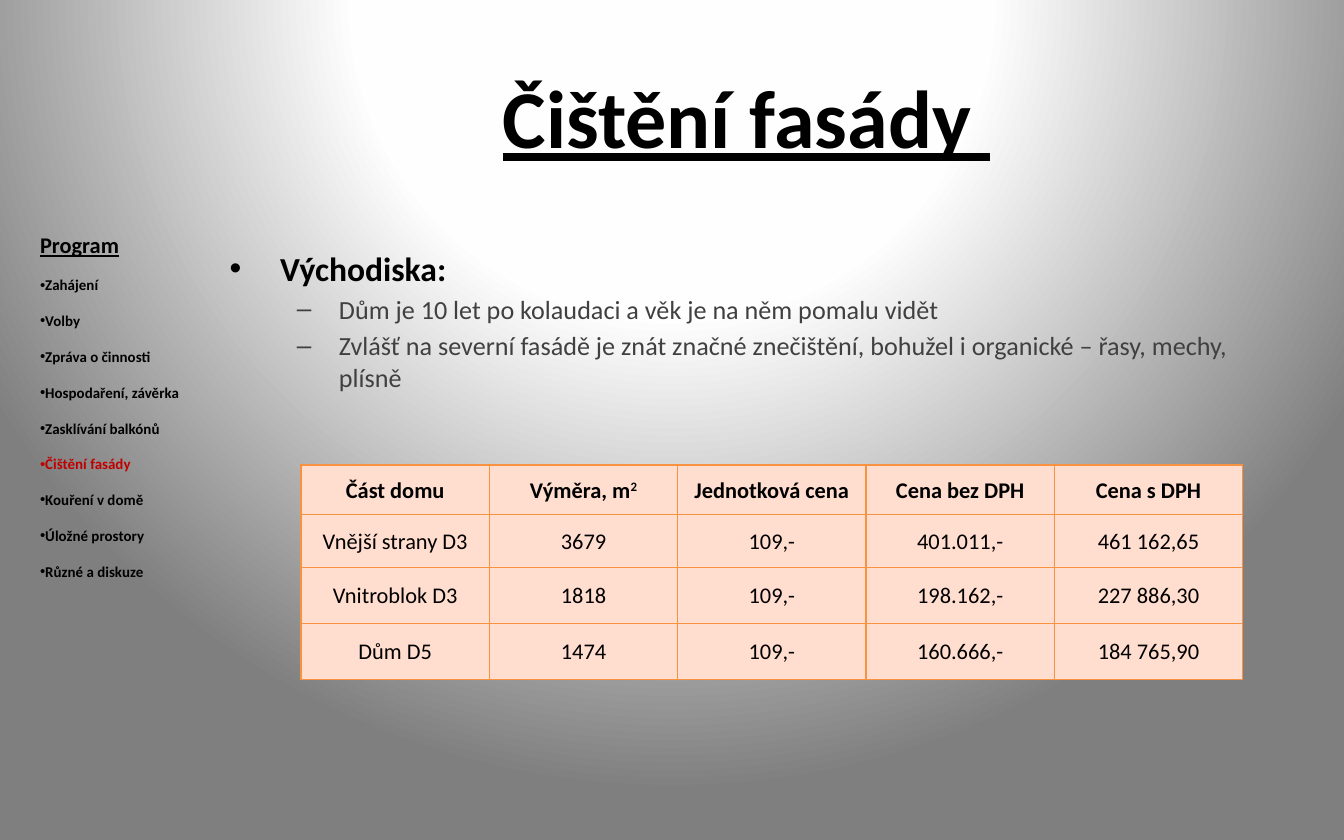
from lxml import etree
from pptx import Presentation
from pptx.dml.color import RGBColor
from pptx.enum.text import MSO_ANCHOR, PP_ALIGN
from pptx.oxml import parse_xml
from pptx.oxml.ns import nsdecls, qn
from pptx.util import Pt

CENTER = PP_ALIGN.CENTER
MIDDLE = MSO_ANCHOR.MIDDLE
FONT = "Calibri"
COLORS = {"text": "000000", "muted": "404040", "active": "C00000",
          "cell": "FFDDCF", "border": "F69240"}
GRADIENT = [(0, "FFFFFF"), (40, "FEFEFE"), (100, "7F7F7F")]

# Content
TITLE = "Čištění fasády "
HEADING = "Východiska:"
POINTS = [
    "Dům je 10 let po kolaudaci a věk je na něm pomalu vidět",
    "Zvlášť na severní fasádě je znát značné znečištění, bohužel i organické – řasy, mechy, plísně",
]
AGENDA_TITLE = "Program"
AGENDA = ["Zahájení", "Volby", "Zpráva o činnosti", "Hospodaření, závěrka",
          "Zasklívání balkónů", "Čištění fasády", "Kouření v domě",
          "Úložné prostory", "Různé a diskuze"]
ACTIVE_ITEM = "Čištění fasády"
PRICES = [
    ["Část domu", "Výměra, m", "Jednotková cena", "Cena bez DPH", "Cena s DPH"],
    ["Vnější strany D3", "3679", "109,-", "401.011,-", "461 162,65"],
    ["Vnitroblok D3", "1818", "109,-", "198.162,-", "227 886,30"],
    ["Dům D5", "1474", "109,-", "160.666,-", "184 765,90"],
]
AREA_COLUMN, AREA_EXPONENT = 1, "2"
COLUMN_WIDTH = 100.9
ROW_HEIGHTS = [26.7, 28.3, 30, 30]


def format_runs(paragraph, size, color="text", bold=False, underline=False):
    for run in paragraph.runs:
        run.font.name = FONT
        run.font.size = Pt(size)
        run.font.bold = bold
        run.font.underline = underline
        run.font.color.rgb = RGBColor.from_string(COLORS[color])


def add_bullet(paragraph, character, left=0, hanging=0):
    properties = paragraph._p.get_or_add_pPr()
    properties.set("marL", str(Pt(left)))
    properties.set("indent", str(-Pt(hanging)))
    bullet_font = etree.SubElement(properties, qn("a:buFont"))
    bullet_font.set("typeface", "Arial")
    etree.SubElement(properties, qn("a:buChar")).set("char", character)


def add_text_frame(slide, left, top, width, height):
    box = slide.shapes.add_textbox(Pt(left), Pt(top), Pt(width), Pt(height))
    box.text_frame.word_wrap = True
    return box.text_frame


def set_background(slide):
    stops = "".join(f'<a:gs pos="{position * 1000}"><a:srgbClr val="{color}"/></a:gs>'
                    for position, color in GRADIENT)
    background = parse_xml(
        f'<p:bg {nsdecls("p", "a")}><p:bgPr><a:gradFill rotWithShape="1">'
        f'<a:gsLst>{stops}</a:gsLst><a:path path="circle">'
        '<a:fillToRect l="50000" t="-80000" r="50000" b="180000"/></a:path>'
        '</a:gradFill><a:effectLst/></p:bgPr></p:bg>')
    slide._element.cSld.insert(0, background)


def style_cell(cell):
    cell.vertical_anchor = MIDDLE
    cell.margin_left = cell.margin_right = cell.margin_top = Pt(0.7)
    cell.margin_bottom = Pt(0)
    properties = cell._tc.get_or_add_tcPr()
    for side in ("lnL", "lnR", "lnT", "lnB"):
        properties.append(parse_xml(
            f'<a:{side} {nsdecls("a")} w="{Pt(0.75)}"><a:solidFill>'
            f'<a:srgbClr val="{COLORS["border"]}"/></a:solidFill></a:{side}>'))
    cell.fill.solid()
    cell.fill.fore_color.rgb = RGBColor.from_string(COLORS["cell"])


def add_title(slide):
    frame = add_text_frame(slide, 116, 18, 568, 88)
    frame.vertical_anchor = MIDDLE
    frame.text = TITLE
    frame.paragraphs[0].alignment = CENTER
    format_runs(frame.paragraphs[0], 44, bold=True, underline=True)


def add_body(slide):
    frame = add_text_frame(slide, 116, 129, 567, 300)
    frame.text = HEADING
    add_bullet(frame.paragraphs[0], "•", 27, 27)
    format_runs(frame.paragraphs[0], 18, bold=True)
    for point in POINTS:
        paragraph = frame.add_paragraph()
        paragraph.text = point
        paragraph.level = 1
        paragraph.space_before = Pt(2.8)
        add_bullet(paragraph, "–", 58.5, 22.5)
        format_runs(paragraph, 14, "muted")


def add_agenda(slide):
    frame = add_text_frame(slide, 14.4, 106, 91, 211)
    frame.text = AGENDA_TITLE
    frame.paragraphs[0].line_spacing = 2.0
    format_runs(frame.paragraphs[0], 12, bold=True, underline=True)
    for item in AGENDA:
        paragraph = frame.add_paragraph()
        paragraph.text = item
        paragraph.line_spacing = 2.0
        add_bullet(paragraph, "•")
        format_runs(paragraph, 8, "active" if item == ACTIVE_ITEM else "text", bold=True)


def add_price_table(slide):
    column_count = len(PRICES[0])
    table = slide.shapes.add_table(
        len(PRICES), column_count, Pt(161.3), Pt(249.1),
        Pt(COLUMN_WIDTH * column_count), Pt(sum(ROW_HEIGHTS))).table
    for column in table.columns:
        column.width = Pt(COLUMN_WIDTH)
    for row_index, values in enumerate(PRICES):
        table.rows[row_index].height = Pt(ROW_HEIGHTS[row_index])
        for column_index, value in enumerate(values):
            cell = table.cell(row_index, column_index)
            style_cell(cell)
            paragraph = cell.text_frame.paragraphs[0]
            paragraph.text = value
            paragraph.alignment = CENTER
            if row_index == 0 and column_index == AREA_COLUMN:
                exponent = paragraph.add_run()
                exponent.text = AREA_EXPONENT
                exponent.font._element.set("baseline", "30000")
            format_runs(paragraph, 12, bold=row_index == 0)


def main():
    presentation = Presentation()
    presentation.slide_width, presentation.slide_height = Pt(720), Pt(450)
    slide = presentation.slides.add_slide(presentation.slide_layouts[6])
    set_background(slide)
    add_title(slide)
    add_body(slide)
    add_agenda(slide)
    add_price_table(slide)
    presentation.save("out.pptx")


if __name__ == "__main__":
    main()
